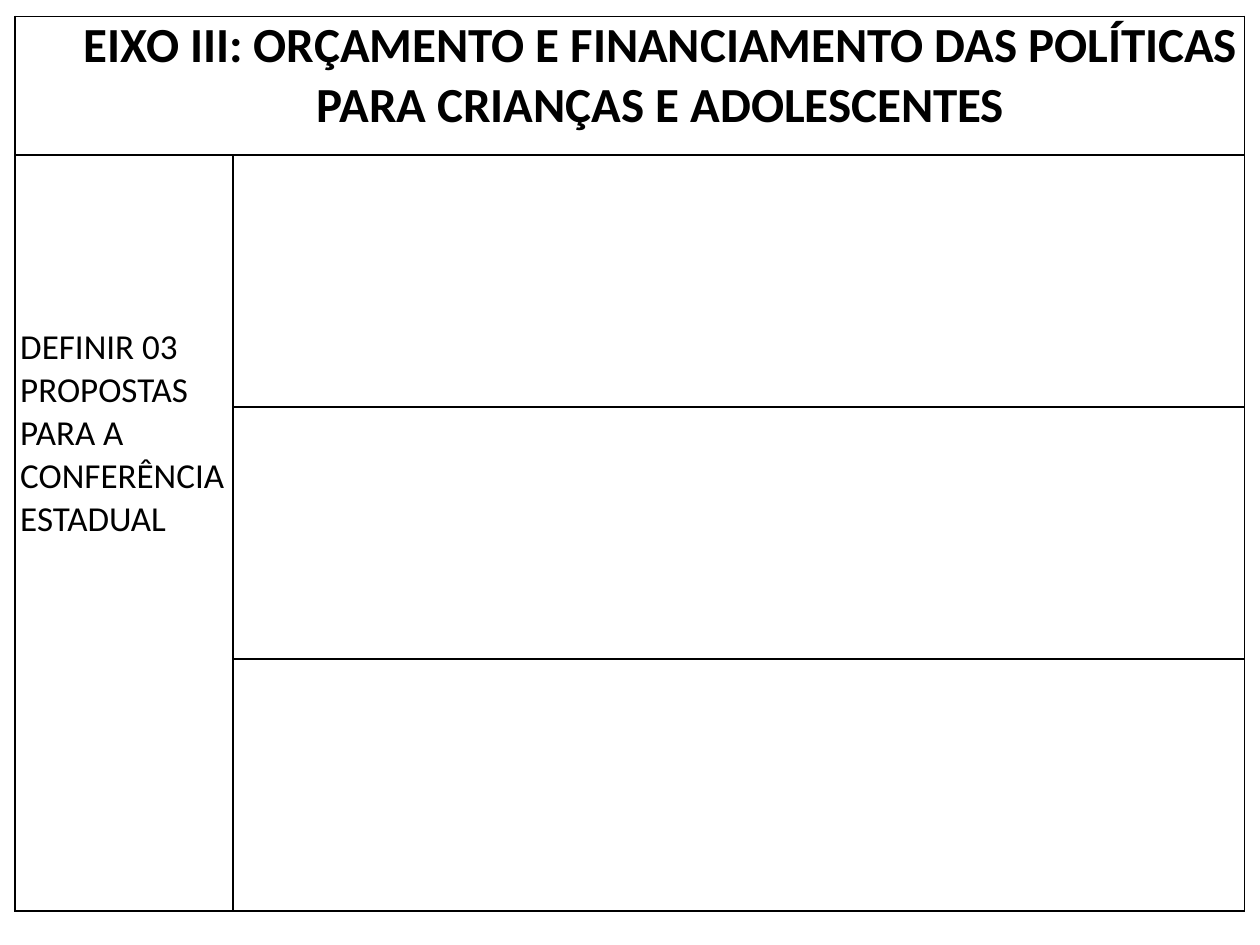
from lxml import etree
from pptx import Presentation
from pptx.dml.color import RGBColor
from pptx.enum import text
from pptx.oxml import ns
from pptx.util import Pt

COLORS = {"ink": "000000", "paper": "FFFFFF"}
TITLE = "EIXO III: ORÇAMENTO E FINANCIAMENTO DAS POLÍTICAS PARA CRIANÇAS E ADOLESCENTES"
LABEL = "DEFINIR 03 PROPOSTAS PARA A CONFERÊNCIA ESTADUAL"
TITLE_FONT = {"name": "Calibri", "size": Pt(28), "bold": True}
LABEL_FONT = {"name": "Calibri", "size": Pt(20), "bold": False}
CELL_FORMAT = {
    "margin_left": Pt(3), "margin_right": Pt(3),
    "margin_top": Pt(0), "margin_bottom": Pt(0),
    "vertical_anchor": text.MSO_ANCHOR.TOP,
}
PROPOSALS = 3


def set_attrs(obj, values):
    for name, value in values.items():
        setattr(obj, name, value)


def format_cell(cell):
    set_attrs(cell, CELL_FORMAT)
    tcPr = cell._tc.get_or_add_tcPr()
    for side in ("lnL", "lnR", "lnT", "lnB"):
        ln = etree.SubElement(tcPr, ns.qn(f"a:{side}"), w=str(Pt(1)))
        fill = etree.SubElement(ln, ns.qn("a:solidFill"))
        etree.SubElement(fill, ns.qn("a:srgbClr"), val=COLORS["ink"])
    cell.fill.solid()
    cell.fill.fore_color.rgb = RGBColor.from_string(COLORS["paper"])


def write(cell, words, font):
    p = cell.text_frame.paragraphs[0]
    r = p.add_run()
    r.text = words
    set_attrs(r.font, font)
    r.font.color.rgb = RGBColor.from_string(COLORS["ink"])
    return p


def add_proposal_table(slide, left, top, width, height):
    header_height, label_width = Pt(79.2), Pt(124.5)
    table = slide.shapes.add_table(PROPOSALS + 1, 2, left, top, width, height).table
    set_attrs(table, {"first_row": False, "horz_banding": False})
    table.columns[0].width = label_width
    table.columns[1].width = width - label_width
    table.rows[0].height = header_height
    for i in range(1, PROPOSALS + 1):
        table.rows[i].height = (height - header_height) // PROPOSALS
    for cell in table.iter_cells():
        format_cell(cell)

    header, label = table.cell(0, 0), table.cell(1, 0)
    header.merge(table.cell(0, 1))
    label.merge(table.cell(PROPOSALS, 0))
    p = write(header, TITLE, TITLE_FONT)
    p.alignment = text.PP_ALIGN.CENTER
    p._p.get_or_add_pPr().set("marL", str(Pt(35)))
    label.margin_top = Pt(98)
    write(label, LABEL, LABEL_FONT)


def main():
    prs = Presentation()
    set_attrs(prs, {"slide_width": Pt(720), "slide_height": Pt(540)})
    slide = prs.slides.add_slide(prs.slide_layouts[6])
    add_proposal_table(slide, Pt(8.6), Pt(9.3), Pt(702.7), Pt(511.2))
    prs.save("out.pptx")


if __name__ == "__main__":
    main()
